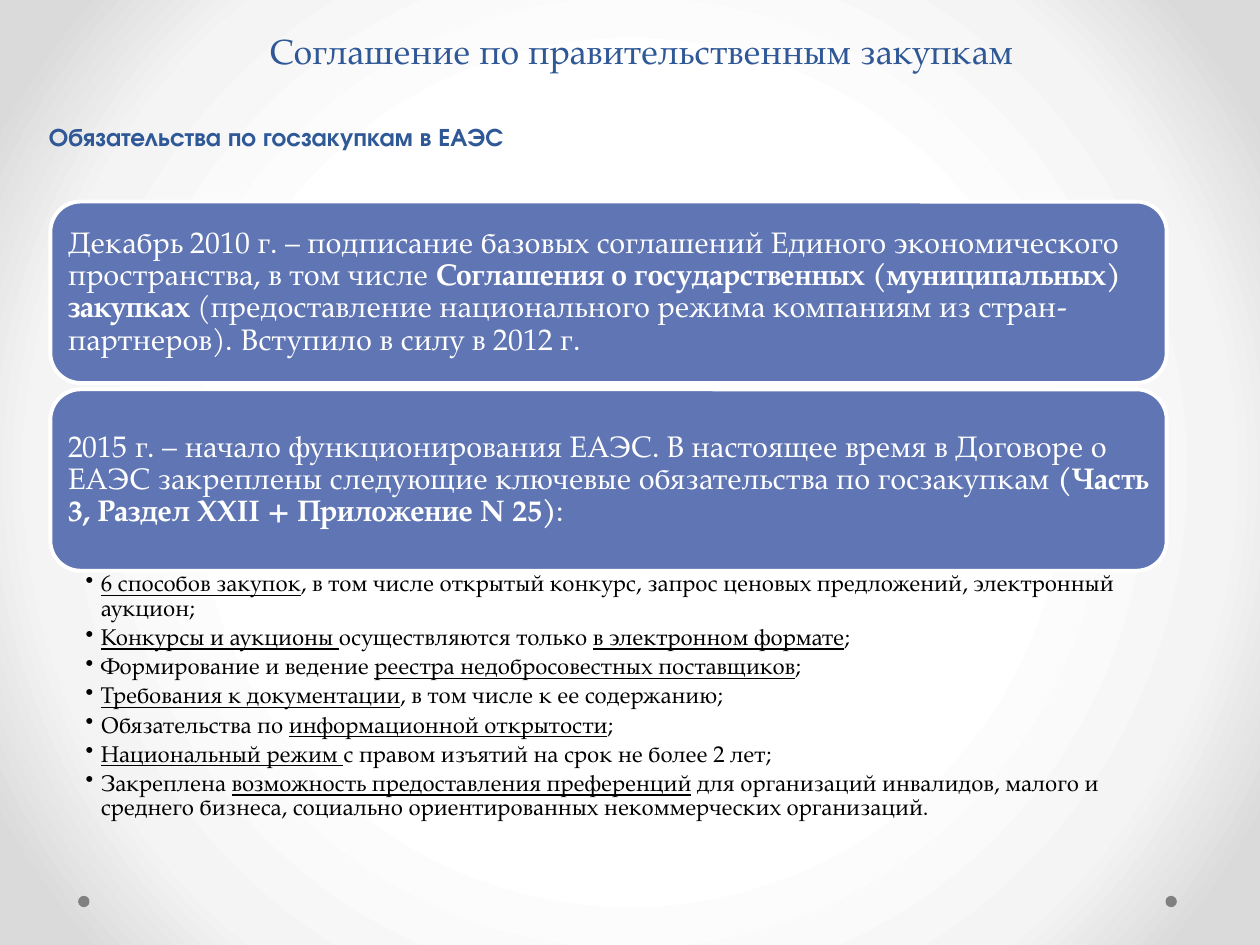
from dataclasses import dataclass

from lxml.etree import SubElement
from pptx import Presentation
from pptx.dml.color import RGBColor
from pptx.enum.shapes import MSO_SHAPE
from pptx.enum.text import MSO_ANCHOR, PP_ALIGN
from pptx.oxml import parse_xml
from pptx.oxml.ns import nsdecls, qn
from pptx.util import Inches, Pt


@dataclass(frozen=True)
class Theme:
    heading: str = "2F5897"
    card: str = "6076B4"
    light: str = "FFFFFF"
    body: str = "000000"
    dot: str = "808080"
    backdrop: tuple = ((50, "FFFFFF"), (76, "F4F4F4"), (92, "DADADA"))
    serif: str = "TeX Gyre Pagella"
    sans: str = "TeX Gyre Adventor"
    title_size: float = 20
    subtitle_size: float = 14.4
    card_size: float = 17
    list_size: float = 13


THEME = Theme()

MILESTONES = [
    [
        ("Декабрь 2010 г. – подписание базовых соглашений Единого экономического пространства, в том числе ", False),
        ("Соглашения о государственных (муниципальных) закупках", True),
        (" (предоставление национального режима компаниям из стран-партнеров). Вступило в силу в 2012 г.", False),
    ],
    [
        ("2015 г. – начало функционирования ЕАЭС. В настоящее время в Договоре о ЕАЭС закреплены "
         "следующие ключевые обязательства по госзакупкам ", False),
        ("(Часть 3, Раздел XXII + Приложение N 25)", True),
        (":", False),
    ],
]

OBLIGATIONS = [
    [("6 способов закупок", True),
     (", в том числе открытый конкурс, запрос ценовых предложений, электронный аукцион;", False)],
    [("Конкурсы и аукционы ", True), ("осуществляются только ", False),
     ("в электронном формате", True), (";", False)],
    [("Формирование и ведение ", False), ("реестра недобросовестных поставщиков", True), (";", False)],
    [("Требования к документации", True), (", в том числе к ее содержанию;", False)],
    [("Обязательства по ", False), ("информационной открытости", True), (";", False)],
    [("Национальный режим ", True), ("с правом изъятий на срок не более 2 лет;", False)],
    [("Закреплена ", False), ("возможность предоставления преференций", True),
     (" для организаций инвалидов, малого и среднего бизнеса, "
      "социально ориентированных некоммерческих организаций.", False)],
]


def add_run(paragraph, text, *, size, color, face=THEME.serif, bold=False, underline=False):
    run = paragraph.add_run()
    run.text = text
    font = run.font
    font.name, font.size = face, Pt(size)
    font.bold, font.underline = bold, underline
    font.color.rgb = RGBColor.from_string(color)


def set_frame(shape, anchor, margins=(0.1, 0.05, 0.1, 0.05)):
    frame = shape.text_frame
    frame.word_wrap = True
    frame.vertical_anchor = anchor
    (frame.margin_left, frame.margin_top,
     frame.margin_right, frame.margin_bottom) = map(Inches, margins)
    return frame


def add_filled(slide, kind, box, color):
    shape = slide.shapes.add_shape(kind, *map(Inches, box))
    shape.shadow.inherit = False
    shape.fill.solid()
    shape.fill.fore_color.rgb = RGBColor.from_string(color)
    shape.line.fill.background()
    return shape


def paint_backdrop(slide):
    slide.background.fill.solid()
    properties = slide.element.find(".//" + qn("p:bgPr"))
    stops = "".join(
        f'<a:gs pos="{position * 1000}"><a:srgbClr val="{color}"/></a:gs>'
        for position, color in THEME.backdrop
    )
    gradient = parse_xml(
        f'<a:gradFill {nsdecls("a")} rotWithShape="1"><a:gsLst>{stops}</a:gsLst>'
        '<a:path path="circle"><a:fillToRect l="50000" t="50000" r="50000" b="50000"/></a:path>'
        "</a:gradFill>"
    )
    properties.replace(properties.find(qn("a:solidFill")), gradient)


def add_corner_dots(slide, box):
    left, top, width, size = box
    for x in (left, left + width - size):
        add_filled(slide, MSO_SHAPE.OVAL, (x, top, size, size), THEME.dot)


def add_heading(slide, box, text, *, align=PP_ALIGN.LEFT, spacing=None, **style):
    heading = slide.shapes.add_textbox(*map(Inches, box))
    paragraph = set_frame(heading, MSO_ANCHOR.BOTTOM).paragraphs[0]
    paragraph.alignment = align
    paragraph.line_spacing = spacing
    add_run(paragraph, text, color=THEME.heading, **style)


def add_milestones(slide, box, gap):
    left, top, width, height = box
    card_height = (height - gap * (len(MILESTONES) - 1)) / len(MILESTONES)
    for index, parts in enumerate(MILESTONES):
        y = top + index * (card_height + gap)
        card = add_filled(slide, MSO_SHAPE.ROUNDED_RECTANGLE, (left, y, width, card_height), THEME.card)
        card.line.color.rgb = RGBColor.from_string(THEME.light)
        card.line.width = Pt(2.25)
        paragraph = set_frame(card, MSO_ANCHOR.MIDDLE, (0.07,) * 4).paragraphs[0]
        paragraph.alignment = PP_ALIGN.LEFT
        paragraph.line_spacing = 0.9
        for text, bold in parts:
            add_run(paragraph, text, size=THEME.card_size, color=THEME.light, bold=bold)


def add_obligations(slide, box):
    obligations = slide.shapes.add_textbox(*map(Inches, box))
    frame = set_frame(obligations, MSO_ANCHOR.TOP, (0.28, 0.02, 0.13, 0.02))
    for index, parts in enumerate(OBLIGATIONS):
        paragraph = frame.add_paragraph() if index else frame.paragraphs[0]
        paragraph.line_spacing = 0.9
        paragraph.space_after = Pt(0.2 * THEME.list_size)
        properties = paragraph._p.get_or_add_pPr()
        properties.set("marL", str(Inches(0.12)))
        properties.set("indent", str(-Inches(0.12)))
        SubElement(properties, qn("a:buChar")).set("char", "•")
        for text, underline in parts:
            add_run(paragraph, text, size=THEME.list_size, color=THEME.body, underline=underline)


def main():
    presentation = Presentation()
    presentation.slide_width, presentation.slide_height = Inches(10), Inches(7.5)
    slide = presentation.slides.add_slide(presentation.slide_layouts[6])
    paint_backdrop(slide)
    add_corner_dots(slide, (0.62, 7.11, 8.72, 0.09))
    add_heading(slide, (0.29, 0.88, 9.31, 0.37), "Обязательства по госзакупкам в ЕАЭС",
                size=THEME.subtitle_size, face=THEME.sans, bold=True)
    add_milestones(slide, (0.4, 1.6, 8.86, 2.93), gap=0.05)
    add_obligations(slide, (0.4, 4.52, 8.86, 2.35))
    add_heading(slide, (0.32, 0, 9.54, 0.62), "Соглашение по правительственным закупкам",
                align=PP_ALIGN.CENTER, spacing=Pt(58), size=THEME.title_size)
    presentation.save("out.pptx")


if __name__ == "__main__":
    main()
